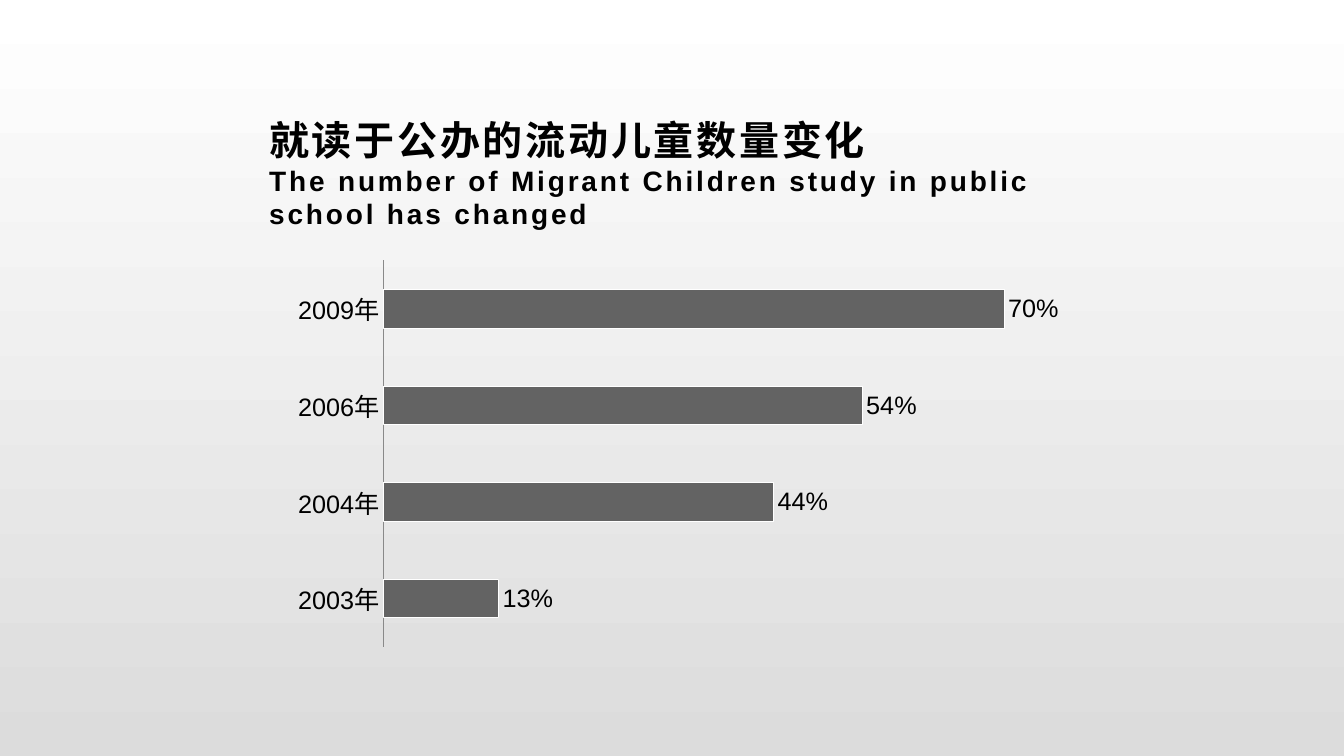
from pptx import Presentation, util as u
from pptx.chart.data import CategoryChartData
from pptx.dml.color import RGBColor
from pptx.enum import chart as ch, text

TITLE = [
    ("就读于公办的流动儿童数量变化", 28.6),
    ("The number of Migrant Children study in public school has changed", 20),
]
SHARES = {"2003年": 0.13, "2004年": 0.44, "2006年": 0.54, "2009年": 0.7}
COLORS = {"text": "000000", "bar": "636363", "edge": "FFFFFF", "axis": "898989",
          "top": "FFFFFF", "bottom": "DCDCDC"}
FONT = "Arial"
TITLE_BOX = (2.56, 1.44, 8.35, 0.55)
CHART_BOX = (2.57, 2.32, 8.27, 4.27)
PLOT = {"x": 0.149, "y": 0.062, "w": 0.851, "h": 0.898}


def rgb(name):
    return RGBColor.from_string(COLORS[name])


def style(font, size, bold=False):
    font.name, font.size, font.bold = FONT, u.Pt(size), bold
    font.color.rgb = rgb("text")


def add_text(slide, box, lines, bold=False, spacing=0):
    """Put lines of (text, size) in one paragraph, parted by line breaks."""
    tf = slide.shapes.add_textbox(*map(u.Inches, box)).text_frame
    tf.word_wrap = True
    tf.vertical_anchor = text.MSO_ANCHOR.MIDDLE
    tf.margin_left, tf.margin_right = u.Inches(0.11), u.Inches(0.08)
    tf.margin_top = tf.margin_bottom = u.Inches(0.04)
    p = tf.paragraphs[0]
    for i, (line, size) in enumerate(lines):
        if i:
            p.add_line_break()
        r = p.add_run()
        r.text = line
        style(r.font, size, bold)
        r.font._element.set("spc", str(spacing * 100))


def place_plot(chart):
    """Fix the inner plot area at its share of the chart's size."""
    area = chart._chartSpace.chart.plotArea
    layout = area.get_or_add_layout() if hasattr(area, "get_or_add_layout") else area.find(
        "{*}layout")
    if layout is None:
        layout = area.makeelement(area.tag.replace("plotArea", "layout"))
        area.insert(0, layout)
    ns = area.tag.replace("plotArea", "")
    manual = layout.makeelement(ns + "manualLayout")
    layout.append(manual)
    settings = {"layoutTarget": "inner", "xMode": "edge", "yMode": "edge", **PLOT}
    for tag, val in settings.items():
        item = manual.makeelement(ns + tag)
        item.set("val", str(val))
        manual.append(item)


def add_bars(slide):
    data = CategoryChartData(number_format="0%")
    data.categories = list(SHARES)
    data.add_series("Series 1", list(SHARES.values()))
    chart = slide.shapes.add_chart(ch.XL_CHART_TYPE.BAR_CLUSTERED,
                                   *map(u.Inches, CHART_BOX), data).chart
    chart.has_legend = chart.has_title = False
    style(chart.font, 18)
    place_plot(chart)

    years, scale = chart.category_axis, chart.value_axis
    years.major_tick_mark = years.minor_tick_mark = ch.XL_TICK_MARK.NONE
    years.format.line.color.rgb = rgb("axis")
    years.format.line.width = u.Pt(0.75)
    style(years.tick_labels.font, 18)
    scale.visible = scale.has_major_gridlines = False
    scale.minimum_scale, scale.maximum_scale = 0, 0.8

    plot = chart.plots[0]
    plot.gap_width, plot.vary_by_categories = 150, False
    bars = plot.series[0]
    bars.format.fill.solid()
    bars.format.fill.fore_color.rgb = rgb("bar")
    bars.format.line.color.rgb = rgb("edge")
    bars.format.line.width = u.Pt(0.75)
    labels = bars.data_labels
    labels.show_value = True
    labels.position = ch.XL_LABEL_POSITION.OUTSIDE_END
    labels.number_format, labels.number_format_is_linked = "0%", False
    style(labels.font, 18)


def main():
    prs = Presentation()
    prs.slide_width, prs.slide_height = u.Inches(13.33), u.Inches(7.5)
    s = prs.slides.add_slide(prs.slide_layouts[6])
    fill = s.background.fill
    fill.gradient()
    fill.gradient_angle = 270
    for stop, name in zip(fill.gradient_stops, ("top", "bottom")):
        stop.color.rgb = rgb(name)
    add_text(s, TITLE_BOX, TITLE, bold=True, spacing=2)
    add_bars(s)
    prs.save("out.pptx")


if __name__ == "__main__":
    main()
